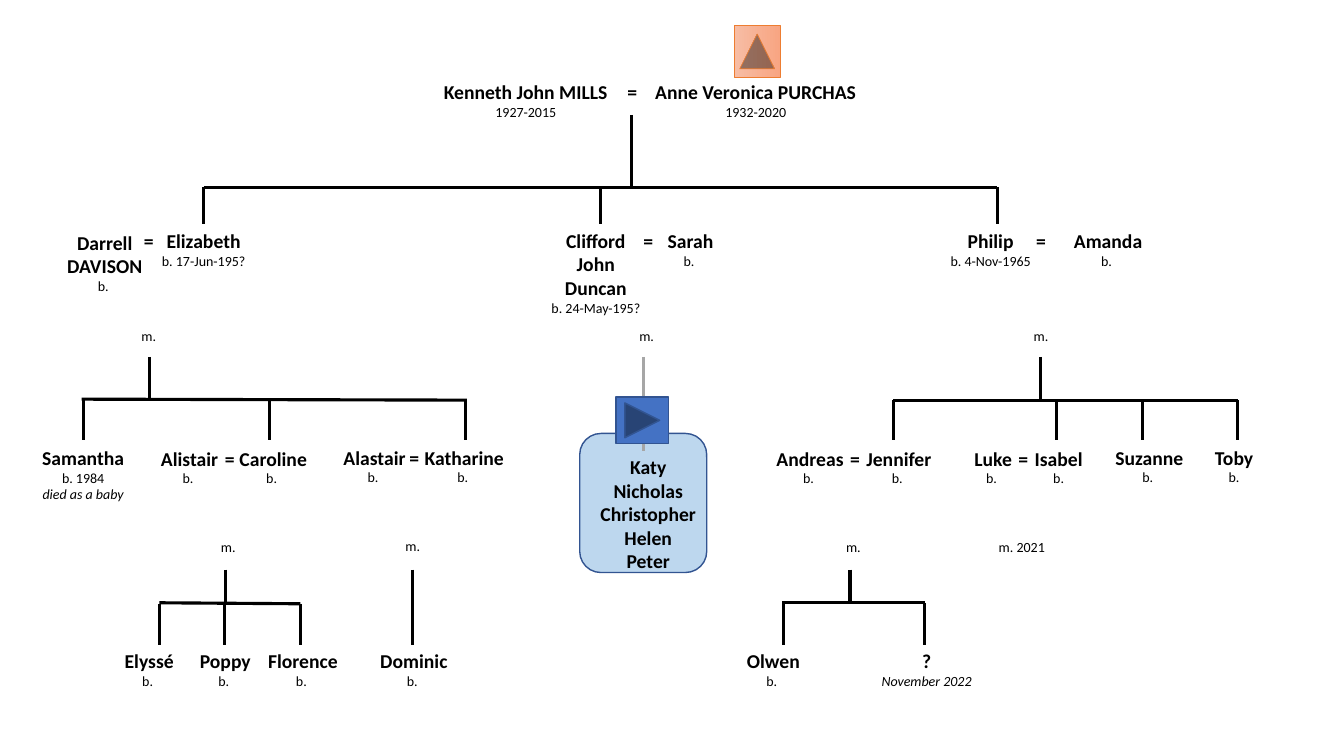
"""Builds a one-slide family tree over four generations."""
import pptx
import pptx.util
import pptx.dml.color
import pptx.enum.shapes
import pptx.enum.text
import pptx.oxml.ns
import lxml.etree

RGBColor = pptx.dml.color.RGBColor
BLACK = RGBColor(0x00, 0x00, 0x00)
GREY = RGBColor(0xA6, 0xA6, 0xA6)
BLUE = RGBColor(0x44, 0x72, 0xC4)
NAVY = RGBColor(0x32, 0x54, 0x91)
PALE_BLUE = RGBColor(0xBD, 0xD7, 0xEE)
ORANGE = RGBColor(0xED, 0x7D, 0x31)
PEACH = RGBColor(0xF7, 0xBD, 0xA5)
SALMON = RGBColor(0xF8, 0xA5, 0x82)

MSO_SHAPE = pptx.enum.shapes.MSO_SHAPE
BUTTON = MSO_SHAPE.ACTION_BUTTON_FORWARD_OR_NEXT
PX = 9144

SECOND_TOP, THIRD_TOP, FOURTH_TOP = 222, 437, 639
SECOND_GAP, THIRD_GAP, CHILDREN_GAP = 53.7, 48.8, 79.2
REMARKS = ["died as a baby", "November 2022"]


class Tree:
    """Holds the text style and the current slide, and draws each kind of element."""

    font = "Calibri"
    name_size = 14
    note_size = 10
    line_width = 2.25

    def __init__(self, slide):
        self.slide = slide

    def shape(self, kind, x, y, w, h, fills, line, width=1):
        sp = self.slide.shapes.add_shape(kind, x * PX, y * PX, w * PX, h * PX)
        sp.shadow.inherit = False
        if len(fills) > 1:
            sp.fill.gradient()
            sp.fill.gradient_angle = 270
            for stop, color in zip(sp.fill.gradient_stops, fills):
                stop.color.rgb = color
        else:
            sp.fill.solid()
            sp.fill.fore_color.rgb = fills[0]
        sp.line.color.rgb = line
        sp.line.width = pptx.util.Pt(width)
        return sp

    def line(self, x1, y1, x2, y2, color=BLACK):
        cxn = self.slide.shapes.add_connector(
            pptx.enum.shapes.MSO_CONNECTOR.STRAIGHT, x1 * PX, y1 * PX, x2 * PX, y2 * PX)
        cxn.line.color.rgb = color
        cxn.line.width = pptx.util.Pt(self.line_width)
        lxml.etree.SubElement(cxn._element.spPr, pptx.oxml.ns.qn("a:effectLst"))

    def branch(self, stem, bar, drops, bottom):
        """Draws a stem (x, top), a bar (x1, y1, x2, y2) and the drops below it."""
        self.line(stem[0], stem[1], stem[0], bar[1])
        self.line(*bar)
        for x in drops:
            self.line(x, bar[3], x, bottom)

    def text(self, x, y, w, h, names, notes=(), gap=0, wrap=False):
        sp = self.slide.shapes.add_textbox(x * PX, y * PX, w * PX, h * PX)
        tf = sp.text_frame
        tf.word_wrap = wrap
        tf.auto_size = pptx.enum.text.MSO_AUTO_SIZE.SHAPE_TO_FIT_TEXT
        self.paragraph(tf.paragraphs[0], names[0], True)
        for name in names[1:]:
            self.paragraph(tf.add_paragraph(), name, True)
        for i, note in enumerate(notes):
            self.paragraph(tf.add_paragraph(), note, False, gap if i == 0 else 0)
        return tf

    def paragraph(self, p, content, is_name, gap=0):
        p.alignment = pptx.enum.text.PP_ALIGN.CENTER
        if gap:
            p.space_before = pptx.util.Pt(gap)
        r = p.add_run()
        r.text = content
        r.font.name = self.font
        r.font.size = pptx.util.Pt(self.name_size if is_name else self.note_size)
        r.font.bold = is_name
        r.font.italic = content in REMARKS
        r.font.color.rgb = BLACK


PEOPLE = [
    (430, 74, 183, 50, ["Kenneth John MILLS"], ["1927-2015"]),
    (612, 74, 30, 57, ["="], []),
    (639, 74, 221, 50, ["Anne Veronica PURCHAS"], ["1932-2020"]),
    (56, 224, 96, 74, ["Darrell", "DAVISON"], ["b. "]),
    (150, SECOND_TOP, 104, 84, ["Elizabeth"], ["b. 17-Jun-195?"]),
    (536, SECOND_TOP, 110, 98, ["Clifford", "John", "Duncan"], ["b. 24-May-195?"]),
    (652, SECOND_TOP, 66, 84, ["Sarah"], ["b. "]),
    (932, SECOND_TOP, 101, 138, ["Philip"], ["b. 4-Nov-1965"]),
    (1055, SECOND_TOP, 88, 50, ["Amanda"], ["b. "]),
    (31, THIRD_TOP, 103, 101, ["Samantha"], ["b. 1984", "died as a baby"]),
    (149, THIRD_TOP + 1, 78, 50, ["Alistair"], ["b. "]),
    (227, THIRD_TOP + 1, 88, 67, ["Caroline"], ["b. "]),
    (330, THIRD_TOP, 83, 50, ["Alastair"], ["b. "]),
    (411, THIRD_TOP, 99, 84, ["Katharine"], ["b. "]),
    (760, THIRD_TOP + 1, 87, 50, ["Andreas"], ["b. "]),
    (849, THIRD_TOP + 1, 85, 67, ["Jennifer"], ["b. "]),
    (956, THIRD_TOP + 1, 58, 50, ["Luke"], ["b. "]),
    (1016, THIRD_TOP + 1, 68, 67, ["Isabel"], ["b."]),
    (1096, THIRD_TOP, 88, 84, ["Suzanne"], ["b. "]),
    (1195, THIRD_TOP, 58, 67, ["Toby"], ["b."]),
]

MARRIAGES = [
    (130, SECOND_TOP, 35, 125, "m.", SECOND_GAP),
    (1015, SECOND_TOP, 35, 125, "m.", SECOND_GAP),
    (209, THIRD_TOP + 1, 38, 118, "m. ", THIRD_GAP),
    (392, THIRD_TOP, 38, 118, "m. ", THIRD_GAP),
    (829, THIRD_TOP + 1, 38, 118, "m. ", THIRD_GAP),
    (980, THIRD_TOP + 1, 70, 118, "m. 2021 ", THIRD_GAP),
]

GRANDCHILDREN = [
    (109, 78, 67, "Elyssé", "b. "),
    (187, 73, 50, "Poppy", "b. "),
    (252, 97, 50, "Florence", "b. "),
    (361, 99, 50, "Dominic", "b. "),
    (728, 78, 50, "Olwen", "b. "),
    (849, 140, 50, "?", "November 2022"),
]

BRANCHES = [
    ((626, 114), (202, 186, 989, 186), (202, 596, 989), SECOND_TOP),
    ((148, 354), (81, 396, 463, 397), (83, 267, 462), THIRD_TOP),
    ((1032, 354), (886, 397, 1228, 397), (886, 1048, 1133, 1227), THIRD_TOP),
    ((224, 565), (158, 598, 298, 599), (158, 223, 298), FOURTH_TOP + 1),
    ((843, 565), (776, 598, 917, 598), (777, 917), FOURTH_TOP + 1),
]

CHILDREN = ["Katy", "Nicholas", "Christopher", "Helen", "Peter"]


def main():
    prs = pptx.Presentation()
    prs.slide_width, prs.slide_height = 1333 * PX, 750 * PX
    tree = Tree(prs.slides.add_slide(prs.slide_layouts[6]))

    tree.shape(MSO_SHAPE.ROUNDED_RECTANGLE, 575, 430, 126, 138, [PALE_BLUE], NAVY)
    tree.line(638, 354, 638, 447, GREY)
    tree.line(409, 565, 409, FOURTH_TOP + 1)
    for branch in BRANCHES:
        tree.branch(*branch)

    for person in PEOPLE:
        tree.text(*person)
    for x, y, w, h, note, gap in MARRIAGES:
        tree.text(x, y, w, h, ["="], [note], gap)
    for x, w, h, name, note in GRANDCHILDREN:
        tree.text(x, FOURTH_TOP, w, h, [name], [note], wrap=True)
    family = tree.text(585, SECOND_TOP, 116, 352, ["="], ["m. "], SECOND_GAP)
    for i, child in enumerate(CHILDREN):
        tree.paragraph(family.add_paragraph(), child, True, CHILDREN_GAP if i == 0 else 0)

    tree.shape(BUTTON, 611, 394, 52, 46, [BLUE], NAVY)
    up = tree.shape(BUTTON, 725, 28, 52, 46, [PEACH, SALMON], ORANGE, 0.5)
    up.rotation = 270
    prs.save("out.pptx")


if __name__ == "__main__":
    main()
